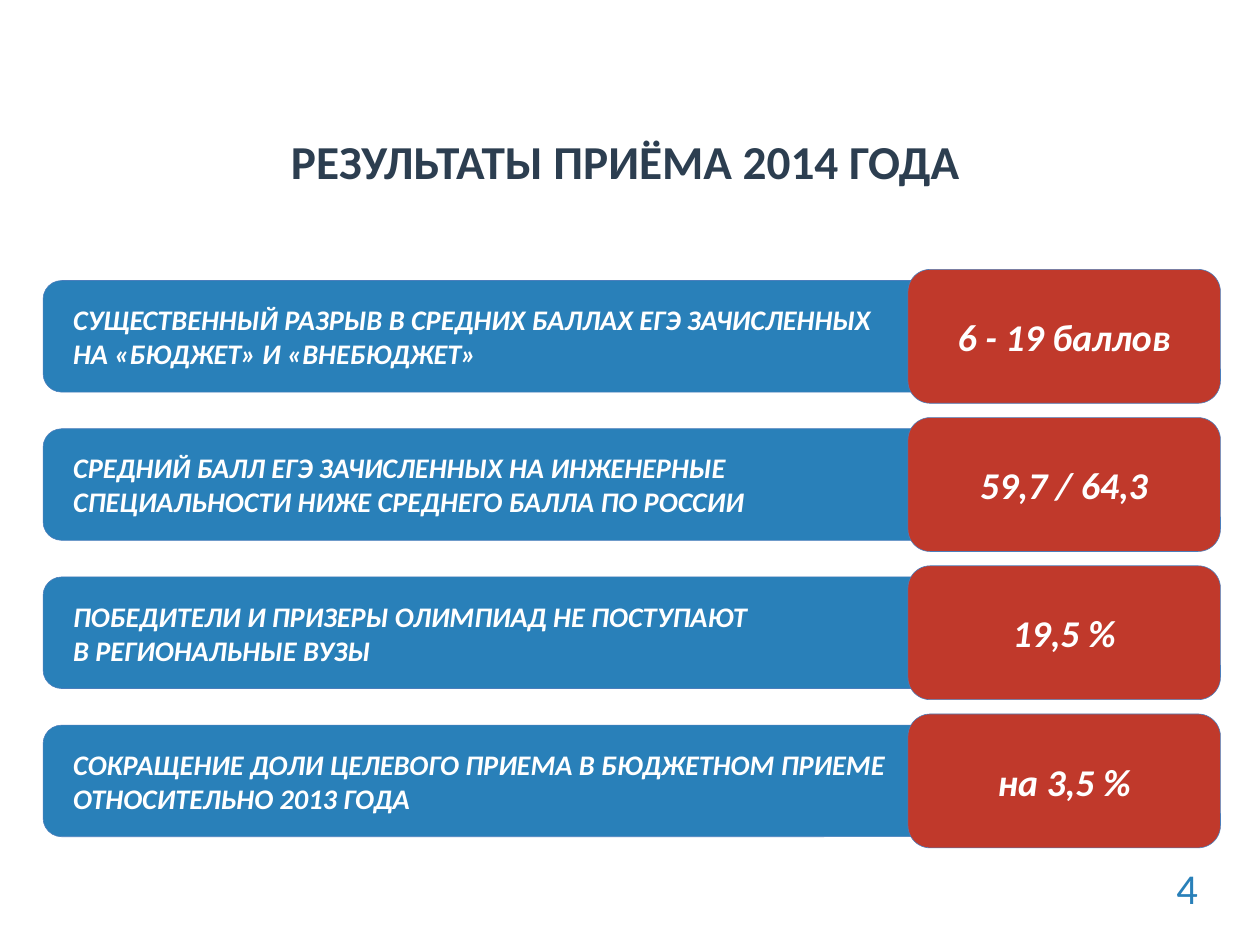
"""Build the slide with the 2014 admission results."""
from pptx import Presentation
from pptx.dml.color import RGBColor
from pptx.enum import shapes, text
from pptx.util import Cm, Pt

FONT = "Calibri"
BLUE, RED, NAVY, WHITE, OUTLINE = "2980B9", "C0392B", "2C3E50", "FFFFFF", "4B7EBC"
FIRST_BAR_TOP, ROW_PITCH = 12.57, 6.64
BAR_HEIGHT, BADGE_HEIGHT = 5, 6
RESULTS = [
    ("СУЩЕСТВЕННЫЙ РАЗРЫВ В СРЕДНИХ БАЛЛАХ ЕГЭ ЗАЧИСЛЕННЫХ\n"
     "НА «БЮДЖЕТ» И «ВНЕБЮДЖЕТ»", "6 - 19 баллов"),
    ("СРЕДНИЙ БАЛЛ ЕГЭ ЗАЧИСЛЕННЫХ НА ИНЖЕНЕРНЫЕ\n"
     "СПЕЦИАЛЬНОСТИ НИЖЕ СРЕДНЕГО БАЛЛА ПО РОССИИ", "59,7 / 64,3"),
    ("ПОБЕДИТЕЛИ И ПРИЗЕРЫ ОЛИМПИАД НЕ ПОСТУПАЮТ\n"
     "В РЕГИОНАЛЬНЫЕ ВУЗЫ", "19,5 %"),
    ("СОКРАЩЕНИЕ ДОЛИ ЦЕЛЕВОГО ПРИЕМА В БЮДЖЕТНОМ ПРИЕМЕ\n"
     "ОТНОСИТЕЛЬНО 2013 ГОДА", "на 3,5 %"),
]


def color(value):
    """Turn a hex string into a colour."""
    return RGBColor.from_string(value)


def write(frame, words, size, ink, align, bold=True, italic=False):
    """Fill a text frame and format all its runs alike."""
    frame.text = words
    for para in frame.paragraphs:
        para.alignment = align
        for span in para.runs:
            span.font.name = FONT
            span.font.size = Pt(size)
            span.font.bold = bold
            span.font.italic = italic
            span.font.color.rgb = color(ink)


def add_label(page, left, top, width, height, words, size, ink, bold=True, wrap=True):
    """Add a left-aligned text box."""
    box = page.shapes.add_textbox(Cm(left), Cm(top), Cm(width), Cm(height))
    box.text_frame.word_wrap = wrap
    write(box.text_frame, words, size, ink, text.PP_ALIGN.LEFT, bold)


def add_panel(page, left, top, width, height, fill, words, size, align):
    """Add a rounded panel with white bold italic text and return it."""
    panel = page.shapes.add_shape(shapes.MSO_SHAPE.ROUNDED_RECTANGLE,
                                  Cm(left), Cm(top), Cm(width), Cm(height))
    panel.shadow.inherit = False
    panel.fill.solid()
    panel.fill.fore_color.rgb = color(fill)
    panel.line.color.rgb = color(OUTLINE)
    panel.line.width = Pt(0.75)
    panel.text_frame.word_wrap = True
    panel.text_frame.vertical_anchor = text.MSO_ANCHOR.MIDDLE
    write(panel.text_frame, words, size, WHITE, align, italic=True)
    return panel


def add_result(page, top, statement, figure):
    """Add a blue statement bar overlapped by its red figure badge."""
    bar = add_panel(page, 1.93, top, 40, BAR_HEIGHT, BLUE,
                    statement, 36, text.PP_ALIGN.LEFT)
    bar.text_frame.margin_left = Cm(1.1)
    badge_top = top - (BADGE_HEIGHT - BAR_HEIGHT) / 2
    add_panel(page, 40.67, badge_top, 14, BADGE_HEIGHT, RED,
              figure, 48, text.PP_ALIGN.CENTER)


def main():
    """Build and save the deck."""
    deck = Presentation()
    deck.slide_width, deck.slide_height = Cm(56.44), Cm(42.34)
    page = deck.slides.add_slide(deck.slide_layouts[6])
    add_label(page, 12.78, 5.82, 38.91, 2.82, "РЕЗУЛЬТАТЫ ПРИЁМА 2014 ГОДА", 60, NAVY)
    for row, (statement, figure) in enumerate(RESULTS):
        add_result(page, FIRST_BAR_TOP + row * ROW_PITCH, statement, figure)
    add_label(page, 52.45, 38.5, 1.5, 2.57, "4", 54, BLUE, bold=False, wrap=False)
    deck.save("out.pptx")


if __name__ == "__main__":
    main()
